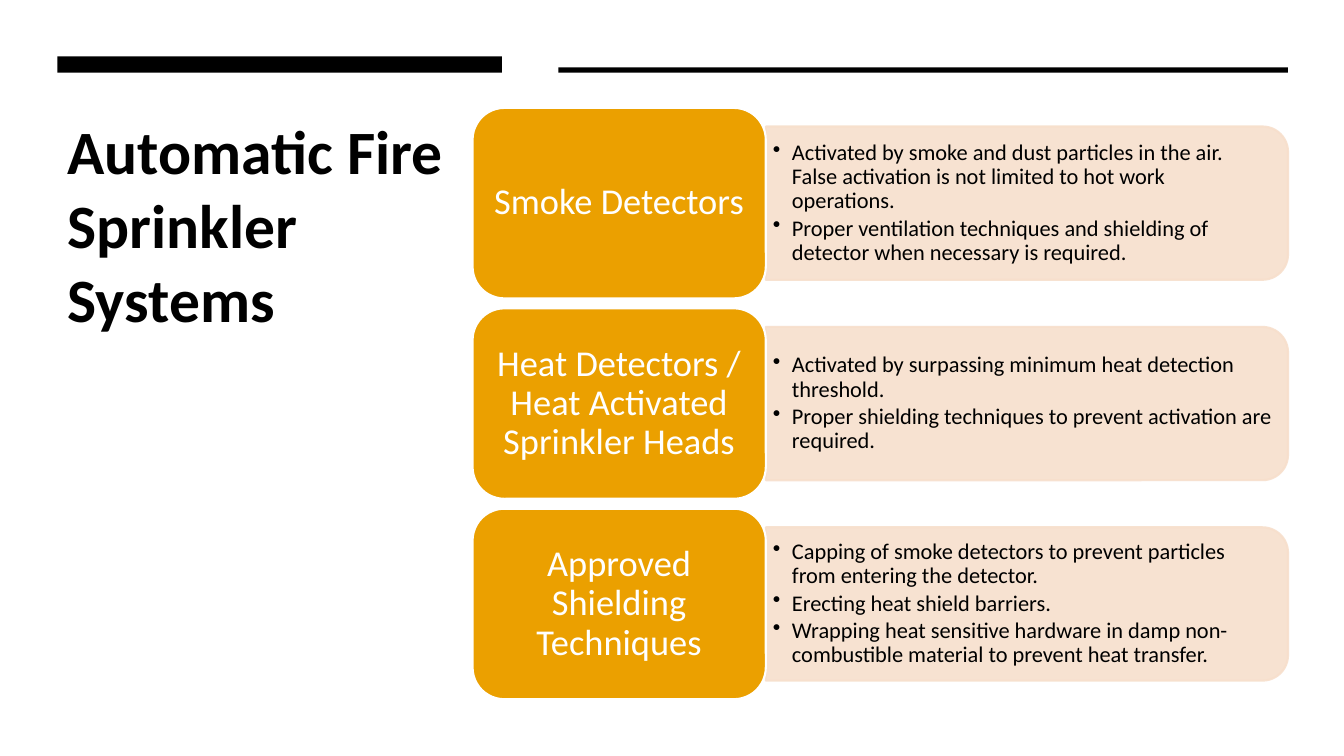
from lxml.etree import SubElement
from pptx import Presentation
from pptx.dml.color import RGBColor
from pptx.enum.shapes import MSO_SHAPE
from pptx.enum.text import MSO_ANCHOR, MSO_AUTO_SIZE, PP_ALIGN
from pptx.oxml.ns import qn
from pptx.util import Cm, Pt

FONT = "Calibri"
BLACK, WHITE, AMBER, PEACH = "000000", "FFFFFF", "EBA000", "F7DFCC"

SYSTEMS = [
    ("Smoke Detectors", [
        "Activated by smoke and dust particles in the air. False activation is not limited to hot work operations.",
        "Proper ventilation techniques and shielding of detector when necessary is required.",
    ]),
    ("Heat Detectors / Heat Activated Sprinkler Heads", [
        "Activated by surpassing minimum heat detection threshold.",
        "Proper shielding techniques to prevent activation are required.",
    ]),
    ("Approved Shielding Techniques", [
        "Capping of smoke detectors to prevent particles from entering the detector.",
        "Erecting heat shield barriers.",
        "Wrapping heat sensitive hardware in damp non-combustible material to prevent heat transfer.",
    ]),
]


def paint(fmt, color, alpha=None):
    """Give a fill a solid colour, with an optional opacity in percent."""
    fmt.solid()
    fmt.fore_color.rgb = RGBColor.from_string(color)
    if alpha:
        for clr in fmt._xPr.iter(qn("a:srgbClr")):
            if clr.getparent().getparent() is fmt._xPr:
                SubElement(clr, qn("a:alpha"), val=str(alpha * 1000))


def add_box(s, kind, x, y, w, h, color, line=None, alpha=None):
    """Add a filled shape, measured in centimetres."""
    sp = s.shapes.add_shape(kind, Cm(x), Cm(y), Cm(w), Cm(h))
    sp.shadow.inherit = False
    paint(sp.fill, color, alpha)
    if line:
        sp.line.width = Pt(1.5)
        paint(sp.line.fill, line, alpha)
    else:
        sp.line.fill.background()
    return sp


def write(tf, lines, size, color=BLACK, bold=False, align=PP_ALIGN.LEFT, spacing=0.9,
          after=0, anchor=MSO_ANCHOR.MIDDLE, inset=(0.25, 0.13), bullet=False):
    """Fill a text frame with one formatted paragraph per line."""
    tf.word_wrap = True
    tf.auto_size = MSO_AUTO_SIZE.NONE
    tf.vertical_anchor = anchor
    tf.margin_left = tf.margin_right = Cm(inset[0])
    tf.margin_top = tf.margin_bottom = Cm(inset[1])
    for i, text in enumerate(lines):
        p = tf.paragraphs[0] if i == 0 else tf.add_paragraph()
        p.alignment = align
        p.line_spacing = spacing
        p.space_after = Pt(after)
        r = p.add_run()
        r.text = text
        r.font.name = FONT
        r.font.size = Pt(size)
        r.font.bold = bold
        r.font.color.rgb = RGBColor.from_string(color)
        if bullet:
            pPr = p._p.get_or_add_pPr()
            pPr.set("marL", str(Cm(0.48)))
            pPr.set("indent", str(-Cm(0.48)))
            SubElement(pPr, qn("a:buChar"), char="•")


def add_title(s, x, y, w, h):
    """Place the title placeholder."""
    sp = s.shapes.title
    sp.left, sp.top, sp.width, sp.height = Cm(x), Cm(y), Cm(w), Cm(h)
    write(sp.text_frame, ["Automatic Fire Sprinkler Systems"], 44, bold=True,
          spacing=1.0, anchor=MSO_ANCHOR.TOP)


def add_rules(s, x, y, w):
    """Draw the thick and the thin bar across the top."""
    thin = 18.39
    add_box(s, MSO_SHAPE.RECTANGLE, x, y, 11.2, 0.41, BLACK)
    add_box(s, MSO_SHAPE.RECTANGLE, x + w - thin, y + 0.28, thin, 0.13, BLACK)


def add_system(s, x, y, w, h, name, points):
    """Draw one row: a name tile and the panel of points to its right."""
    tile_w, panel_h = 7.39, h * 0.805
    panel_x, panel_w = x + tile_w, w - tile_w
    mid_x, mid_y = panel_x + panel_w / 2, y + h / 2
    panel = add_box(s, MSO_SHAPE.ROUND_2_SAME_RECTANGLE, mid_x - panel_h / 2,
                    mid_y - panel_w / 2, panel_h, panel_w, PEACH, line=PEACH, alpha=90)
    panel.rotation = 90
    text_h = panel_h - 0.38
    tb = s.shapes.add_textbox(Cm(panel_x), Cm(mid_y - text_h / 2),
                              Cm(panel_w - 0.2), Cm(text_h))
    write(tb.text_frame, points, 16, after=2.4, inset=(0.18, 0.08), bullet=True)
    tile = add_box(s, MSO_SHAPE.ROUNDED_RECTANGLE, x, y, tile_w, h, AMBER, line=WHITE)
    write(tile.text_frame, [name], 26, color=WHITE, align=PP_ALIGN.CENTER,
          inset=(0.28, 0.13))


def add_systems(s, x, y, w, h, gap=0.25):
    """Stack the rows evenly in the given box."""
    row_h = (h - gap * (len(SYSTEMS) - 1)) / len(SYSTEMS)
    for i, (name, points) in enumerate(SYSTEMS):
        add_system(s, x, y + i * (row_h + gap), w, row_h, name, points)


def main():
    """Build and save the slide."""
    prs = Presentation()
    prs.slide_width, prs.slide_height = Cm(33.87), Cm(19.05)
    s = prs.slides.add_slide(prs.slide_layouts[5])
    add_title(s, 1.45, 2.72, 10.16, 9.35)
    add_rules(s, 1.45, 1.42, 31.01)
    add_systems(s, 11.91, 2.72, 20.55, 14.9)
    prs.save("out.pptx")


if __name__ == "__main__":
    main()
